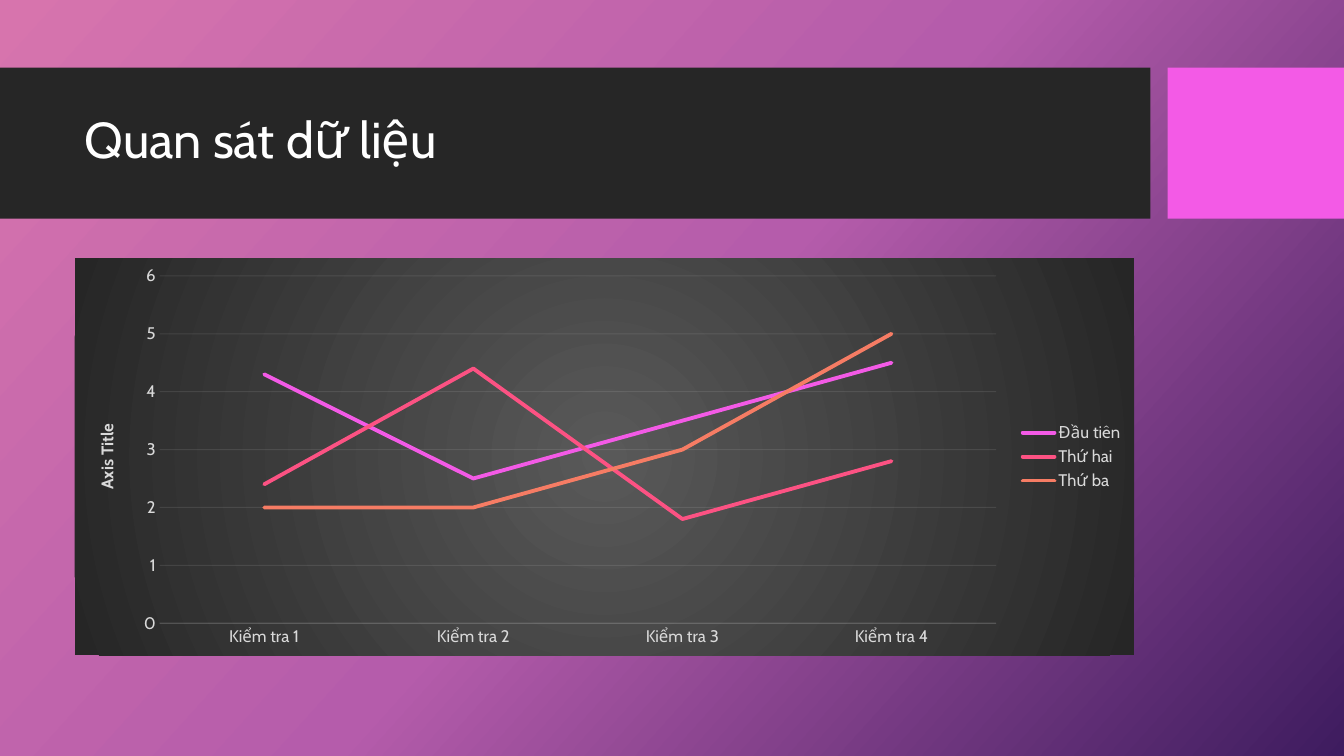
import pptx
import pptx.chart.data
import pptx.dml.color
import pptx.enum.chart
import pptx.enum.shapes
import pptx.enum.text
import pptx.oxml
import pptx.oxml.ns
import pptx.util
from dataclasses import dataclass

Inches = pptx.util.Inches
Pt = pptx.util.Pt
rgb = pptx.dml.color.RGBColor.from_string
qn = pptx.oxml.ns.qn


@dataclass(frozen=True)
class Theme:
    font: str = "Cabin"
    title_size: int = 36
    label_size: int = 12
    white: str = "FFFFFF"
    label: str = "D9D9D9"
    rule: str = "F2F2F2"
    band: str = "262626"
    accent: str = "F35AE6"
    series: tuple = ("F35AE6", "FC5283", "F67C64")
    backdrop: tuple = ((0, "D774AD"), (50, "B55CAB"), (100, "3E1C5F"))
    panel: tuple = ((0, "595959"), (100, "262626"))


theme = Theme()


def gradient(stops, direction):
    """Return a gradient fill with the given stops and direction XML."""
    stop_xml = "".join(
        f'<a:gs pos="{place * 1000}"><a:srgbClr val="{color}"/></a:gs>'
        for place, color in stops
    )
    return pptx.oxml.parse_xml(
        f'<a:gradFill {pptx.oxml.ns.nsdecls("a")} rotWithShape="1">'
        f"<a:gsLst>{stop_xml}</a:gsLst>{direction}</a:gradFill>"
    )


def style_font(font, size, color, bold=False):
    font.name = theme.font
    font.size = Pt(size)
    font.bold = bold
    font.color.rgb = rgb(color)


deck = pptx.Presentation()
deck.slide_width = Inches(13.33)
deck.slide_height = Inches(7.5)
slide = deck.slides.add_slide(deck.slide_layouts[6])

# Background
slide.background.fill.solid()
plain_fill = next(slide.element.iter(qn("a:solidFill")))
plain_fill.getparent().replace(
    plain_fill, gradient(theme.backdrop, f'<a:lin ang="{42 * 60000}" scaled="0"/>')
)

# Title band and accent block
for left, width, color in ((0, 11.41, theme.band), (11.58, 1.75, theme.accent)):
    block = slide.shapes.add_shape(
        pptx.enum.shapes.MSO_SHAPE.RECTANGLE,
        Inches(left), Inches(0.67), Inches(width), Inches(1.5),
    )
    block.shadow.inherit = False
    block.fill.solid()
    block.fill.fore_color.rgb = rgb(color)
    block.line.fill.background()

# Title
title = slide.shapes.add_textbox(Inches(0.74), Inches(0.82), Inches(10.51), Inches(1.18))
title.text_frame.word_wrap = True
title.text_frame.vertical_anchor = pptx.enum.text.MSO_ANCHOR.MIDDLE
heading = title.text_frame.paragraphs[0]
heading.line_spacing = 0.9
heading_run = heading.add_run()
heading_run.text = "Quan sát dữ liệu"
style_font(heading_run.font, theme.title_size, theme.white)

# Line chart
test_data = pptx.chart.data.CategoryChartData()
test_data.categories = [f"Kiểm tra {number}" for number in range(1, 5)]
test_data.add_series("Đầu tiên", (4.3, 2.5, 3.5, 4.5))
test_data.add_series("Thứ hai", (2.4, 4.4, 1.8, 2.8))
test_data.add_series("Thứ ba", (2, 2, 3, 5))
chart = slide.shapes.add_chart(
    pptx.enum.chart.XL_CHART_TYPE.LINE,
    Inches(0.74), Inches(2.56), Inches(10.51), Inches(3.94), test_data,
).chart
chart.has_title = False
style_font(chart.font, theme.label_size, theme.label)

# Chart panel with a radial gradient
panel = pptx.oxml.parse_xml(
    f'<c:spPr {pptx.oxml.ns.nsdecls("c", "a")}><a:ln><a:noFill/></a:ln></c:spPr>'
)
panel.insert(0, gradient(
    theme.panel,
    '<a:path path="circle"><a:fillToRect l="50000" t="50000" r="50000" b="50000"/></a:path>',
))
chart.element.find(qn("c:chart")).addnext(panel)

# Series
chart.plots[0].vary_by_categories = False
for series, color in zip(chart.plots[0].series, theme.series):
    series.smooth = False
    series.marker.style = pptx.enum.chart.XL_MARKER_STYLE.NONE
    series.format.line.width = Pt(2.75)
    series.format.line.color.rgb = rgb(color)
    series.format.line._ln.set("cap", "rnd")

# Axes and gridlines
tests, values = chart.category_axis, chart.value_axis
for axis in (tests, values):
    axis.major_tick_mark = axis.minor_tick_mark = pptx.enum.chart.XL_TICK_MARK.NONE
    style_font(axis.tick_labels.font, theme.label_size, theme.label)
values.minimum_scale = 0
values.maximum_scale = 6
values.major_unit = 1
values.format.line.fill.background()
values.has_major_gridlines = True
for rule in (tests.format.line, values.major_gridlines.format.line):
    rule.width = Pt(0.75)
    rule.color.rgb = rgb(theme.rule)
    rule_color = next(rule._ln.iter(qn("a:srgbClr")))
    rule_color.append(pptx.oxml.parse_xml(
        f'<a:alpha {pptx.oxml.ns.nsdecls("a")} val="10000"/>'
    ))

# Value axis title
axis_title = values.axis_title.text_frame
axis_title._txBody.find(qn("a:bodyPr")).set("rot", str(-90 * 60000))
axis_title._txBody.find(qn("a:bodyPr")).set("vert", "horz")
axis_title_run = axis_title.paragraphs[0].add_run()
axis_title_run.text = "Axis Title"
style_font(axis_title_run.font, theme.label_size, theme.label, bold=True)

# Legend
chart.has_legend = True
chart.legend.position = pptx.enum.chart.XL_LEGEND_POSITION.RIGHT
chart.legend.include_in_layout = False
style_font(chart.legend.font, theme.label_size, theme.label)

deck.save("out.pptx")
